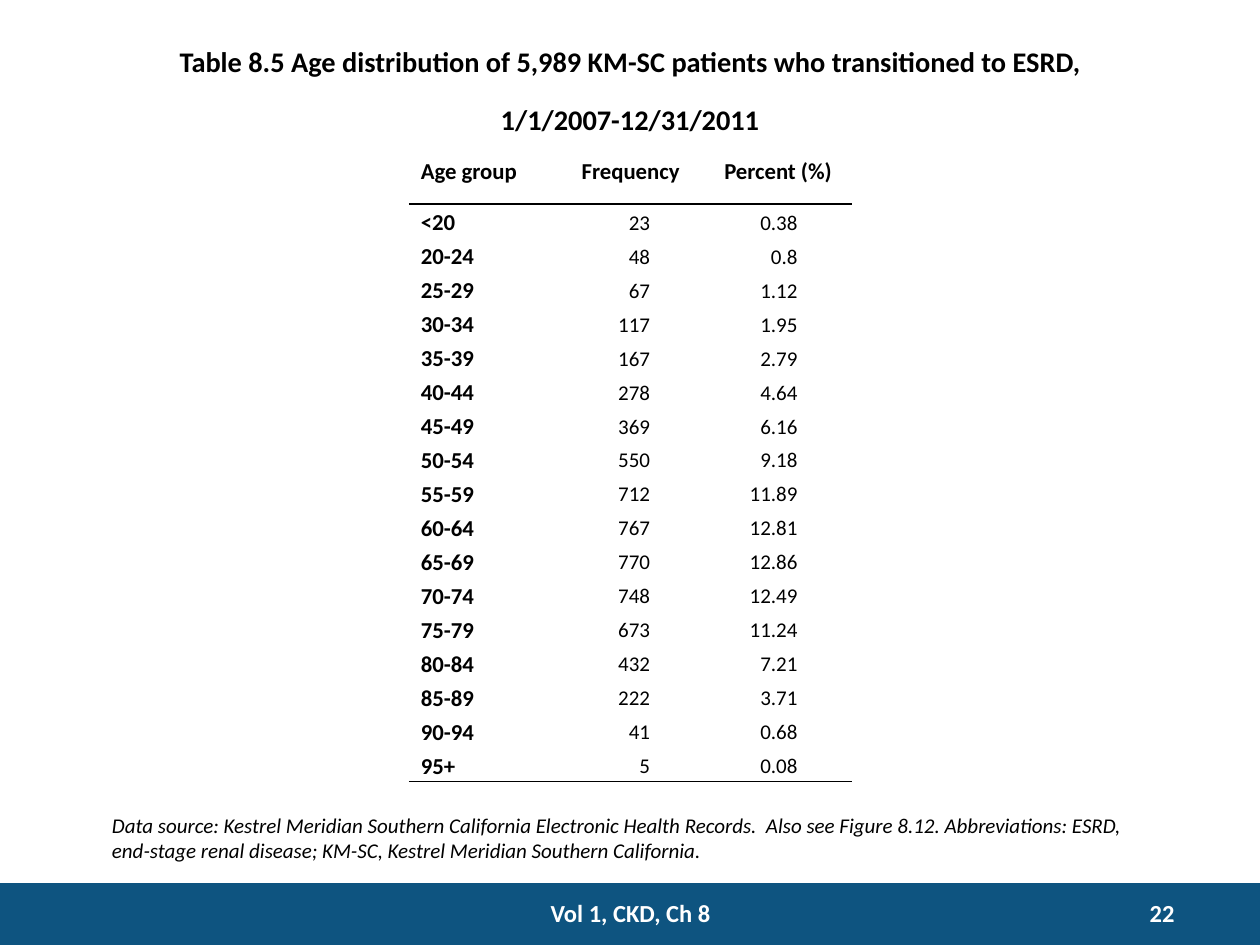
from dataclasses import dataclass
from lxml.etree import SubElement
from pptx import Presentation
from pptx.dml.color import RGBColor as Rgb
from pptx.enum.shapes import MSO_SHAPE as Shape
from pptx.enum.text import MSO_ANCHOR as Anchor, PP_ALIGN as Align
from pptx.oxml import parse_xml
from pptx.oxml.ns import nsdecls, qn
from pptx.util import Pt

PX = 914400 // 100


@dataclass(frozen=True)
class Theme:
    font: str = "Calibri"
    ink: Rgb = Rgb(0, 0, 0)
    white: Rgb = Rgb(255, 255, 255)
    band: Rgb = Rgb(0x0E, 0x54, 0x80)
    title_size: int = 28
    label_size: int = 13
    body_size: int = 12
    footer_size: int = 14


theme = Theme()


def format_text(text_frame, size, align, color=theme.ink, bold=False, italic=False):
    text_frame.word_wrap = True
    for paragraph in text_frame.paragraphs:
        paragraph.alignment = align
        for run in paragraph.runs:
            run.font.name = theme.font
            run.font.size = Pt(size)
            run.font.color.rgb = color
            run.font.bold = bold
            run.font.italic = italic


def add_rule(cell, side):
    border = parse_xml(f'<a:{side} {nsdecls("a")} w="{Pt(1)}"/>')
    fill = SubElement(border, qn("a:solidFill"))
    SubElement(fill, qn("a:srgbClr")).set("val", str(theme.ink))
    cell._tc.get_or_add_tcPr().insert(0, border)


presentation = Presentation()
presentation.slide_width = 1000 * PX
presentation.slide_height = 750 * PX
slide = presentation.slides.add_slide(presentation.slide_layouts[5])

band = slide.shapes.add_shape(Shape.RECTANGLE, 0, 701 * PX, 1000 * PX, 50 * PX)
band.shadow.inherit = False
band.fill.solid()
band.fill.fore_color.rgb = theme.band
band.line.fill.background()

title = slide.shapes.title
title.left, title.top, title.width, title.height = 0, 25 * PX, 1000 * PX, 89 * PX
title.text_frame.text = (
    "Table 8.5 Age distribution of 5,989 KM-SC patients who transitioned to ESRD,\n"
    "1/1/2007-12/31/2011"
)
title.text_frame.vertical_anchor = Anchor.TOP
format_text(title.text_frame, theme.title_size, Align.CENTER, bold=True)
for paragraph in title.text_frame.paragraphs:
    for run in paragraph.runs:
        run.font._element.set("baseline", "30000")

source_note = (
    "Data source: Kestrel Meridian Southern California Electronic Health Records.  "
    "Also see Figure 8.12. Abbreviations: ESRD, end-stage renal disease; "
    "KM-SC, Kestrel Meridian Southern California."
)
text_boxes = [
    (79, 640, 842, 50, source_note, theme.body_size, Align.LEFT, theme.ink, False, True),
    (392, 708, 217, 33, "Vol 1, CKD, Ch 8", theme.footer_size, Align.CENTER, theme.white, True, False),
    (842, 708, 100, 30, "22", theme.footer_size, Align.RIGHT, theme.white, True, False),
]
for left, top, width, height, text, *style in text_boxes:
    box = slide.shapes.add_textbox(left * PX, top * PX, width * PX, height * PX)
    box.text_frame.text = text
    format_text(box.text_frame, *style)

rows = [
    ("Age group", "Frequency", "Percent (%)"),
    ("<20", "23", "0.38"),
    ("20-24", "48", "0.8"),
    ("25-29", "67", "1.12"),
    ("30-34", "117", "1.95"),
    ("35-39", "167", "2.79"),
    ("40-44", "278", "4.64"),
    ("45-49", "369", "6.16"),
    ("50-54", "550", "9.18"),
    ("55-59", "712", "11.89"),
    ("60-64", "767", "12.81"),
    ("65-69", "770", "12.86"),
    ("70-74", "748", "12.49"),
    ("75-79", "673", "11.24"),
    ("80-84", "432", "7.21"),
    ("85-89", "222", "3.71"),
    ("90-94", "41", "0.68"),
    ("95+", "5", "0.08"),
]
last_row = len(rows) - 1
rules = {0: "lnB", 1: "lnT", last_row: "lnB"}

table = slide.shapes.add_table(
    len(rows), 3, 325 * PX, 108 * PX, 351 * PX, 513 * PX
).table
table.first_row = False
table.horz_banding = False
for column in table.columns:
    column.width = 117 * PX

for row_index, values in enumerate(rows):
    table.rows[row_index].height = (54 if row_index == 0 else 27) * PX
    for column_index, value in enumerate(values):
        is_number = row_index > 0 and column_index > 0
        cell = table.cell(row_index, column_index)
        cell.text_frame.text = value
        cell.fill.background()
        cell.vertical_anchor = Anchor.MIDDLE
        cell.margin_top = cell.margin_bottom = 0
        cell.margin_left = (10 if is_number else 9) * PX
        cell.margin_right = (43 if is_number else 9) * PX
        if is_number:
            format_text(cell.text_frame, theme.body_size, Align.RIGHT)
        else:
            align = Align.CENTER if column_index else Align.LEFT
            format_text(cell.text_frame, theme.label_size, align, bold=True)
        cell.text_frame.paragraphs[0].line_spacing = 1.15
        if row_index in rules:
            add_rule(cell, rules[row_index])

presentation.save("out.pptx")
